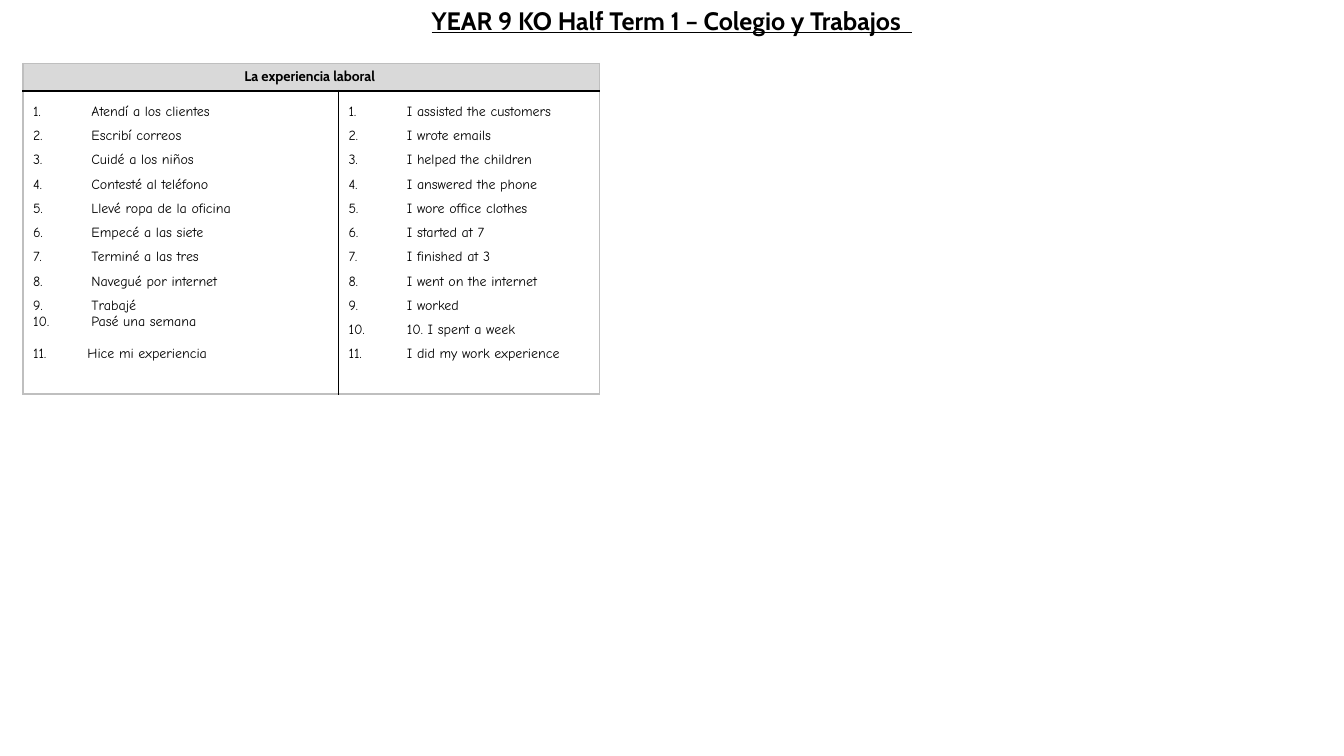
from dataclasses import dataclass

from lxml import etree
from pptx import Presentation
from pptx import util as u
from pptx.dml.color import RGBColor
from pptx.enum import text
from pptx.oxml import ns


@dataclass(frozen=True)
class Theme:
    ink: str = "000000"
    header: str = "D9D9D9"
    frame: str = "BFBFBF"
    heading_font: str = "Cabin"
    body_font: str = "Comic Neue"
    title_size: int = 18
    body_size: int = 10


THEME = Theme()
INDENT = 1.47

SPANISH = [
    "Atendí a los clientes", "Escribí correos", "Cuidé a los niños",
    "Contesté al teléfono", "Llevé ropa de la oficina", "Empecé a las siete",
    "Terminé a las tres", "Navegué por internet", "Trabajé",
]
SPANISH_END = ["Pasé una semana", "Hice mi experiencia"]
ENGLISH = [
    "I assisted the customers", "I wrote emails", "I helped the children",
    "I answered the phone", "I wore office clothes", "I started at 7",
    "I finished at 3", "I went on the internet", "I worked",
    "10. I spent a week", "I did my work experience",
]


def add_run(p, words, font, size, bold=False, underline=False):
    r = p.add_run()
    r.text = words
    r.font.name = font
    r.font.size = u.Pt(size)
    r.font.bold = bold
    r.font.underline = underline
    r.font.color.rgb = RGBColor.from_string(THEME.ink)


def add_title(s, box, words):
    sp = s.shapes.title
    sp.left, sp.top, sp.width, sp.height = (u.Cm(v) for v in box)
    tf = sp.text_frame
    tf.auto_size = text.MSO_AUTO_SIZE.NONE
    tf.vertical_anchor = text.MSO_ANCHOR.MIDDLE
    p = tf.paragraphs[0]
    p.alignment = text.PP_ALIGN.CENTER
    p.line_spacing = 1.0
    add_run(p, words, THEME.heading_font, THEME.title_size, True, True)


def set_borders(cell, **sides):
    tc_pr = cell._tc.get_or_add_tcPr()
    for i, side in enumerate("LRTB"):
        color, width = sides[side]
        ln = etree.Element(ns.qn("a:ln" + side), w=str(u.Pt(width)))
        fill = etree.SubElement(ln, ns.qn("a:solidFill"))
        etree.SubElement(fill, ns.qn("a:srgbClr"), val=color)
        tc_pr.insert(i, ln)


def number(p, start, indent):
    p_pr = p._p.get_or_add_pPr()
    p_pr.set("marL", str(u.Cm(indent)))
    p_pr.set("indent", str(-u.Cm(indent)))
    bullet = etree.SubElement(p_pr, ns.qn("a:buAutoNum"), type="arabicPeriod")
    if start > 1:
        bullet.set("startAt", str(start))


def add_list(cell, phrases, closing=()):
    tf = cell.text_frame
    for i, phrase in enumerate([*phrases, *closing]):
        p = tf.paragraphs[0] if i == 0 else tf.add_paragraph()
        extra = i - len(phrases)
        if extra < 0:
            p.line_spacing = 1.5
            number(p, 1, INDENT)
        else:
            p.line_spacing = 1.0
            p.space_before = u.Pt(11.5 * extra)
            number(p, i + 1, INDENT - 0.1 * extra)
        add_run(p, phrase, THEME.body_font, THEME.body_size)


def add_vocabulary(s, box, heading, columns):
    left, top, width, height = box
    header_height, spanish_width = 0.69, 7.95
    table = s.shapes.add_table(2, 2, *(u.Cm(v) for v in box)).table
    table.first_row = table.horz_banding = False
    for col, w in zip(table.columns, (spanish_width, width - spanish_width)):
        col.width = u.Cm(w)
    for row, h in zip(table.rows, (header_height, height - header_height)):
        row.height = u.Cm(h)

    frame, rule, divider = (THEME.frame, 1), (THEME.ink, 1.5), (THEME.ink, 1)
    for i in range(2):
        head, body = table.cell(0, i), table.cell(1, i)
        set_borders(head, L=frame, R=frame, T=frame, B=rule)
        set_borders(body, L=divider if i else frame,
                    R=frame if i else divider, T=rule, B=frame)
        head.fill.solid()
        head.fill.fore_color.rgb = RGBColor.from_string(THEME.header)
        body.fill.background()
        add_list(body, *columns[i])

    title_cell = table.cell(0, 0)
    title_cell.merge(table.cell(0, 1))
    p = title_cell.text_frame.paragraphs[0]
    p.alignment = text.PP_ALIGN.CENTER
    add_run(p, heading, THEME.heading_font, THEME.body_size, True)


def main():
    prs = Presentation()
    prs.slide_width, prs.slide_height = u.Cm(33.87), u.Cm(19.05)
    s = prs.slides.add_slide(prs.slide_layouts[5])
    add_title(s, (0, 0, 33.87, 1.02), "YEAR 9 KO Half Term 1 – Colegio y Trabajos  ")
    add_vocabulary(s, (0.58, 1.6, 14.53, 8.33), "La experiencia laboral ",
                   [(SPANISH, SPANISH_END), (ENGLISH,)])
    prs.save("out.pptx")


if __name__ == "__main__":
    main()
